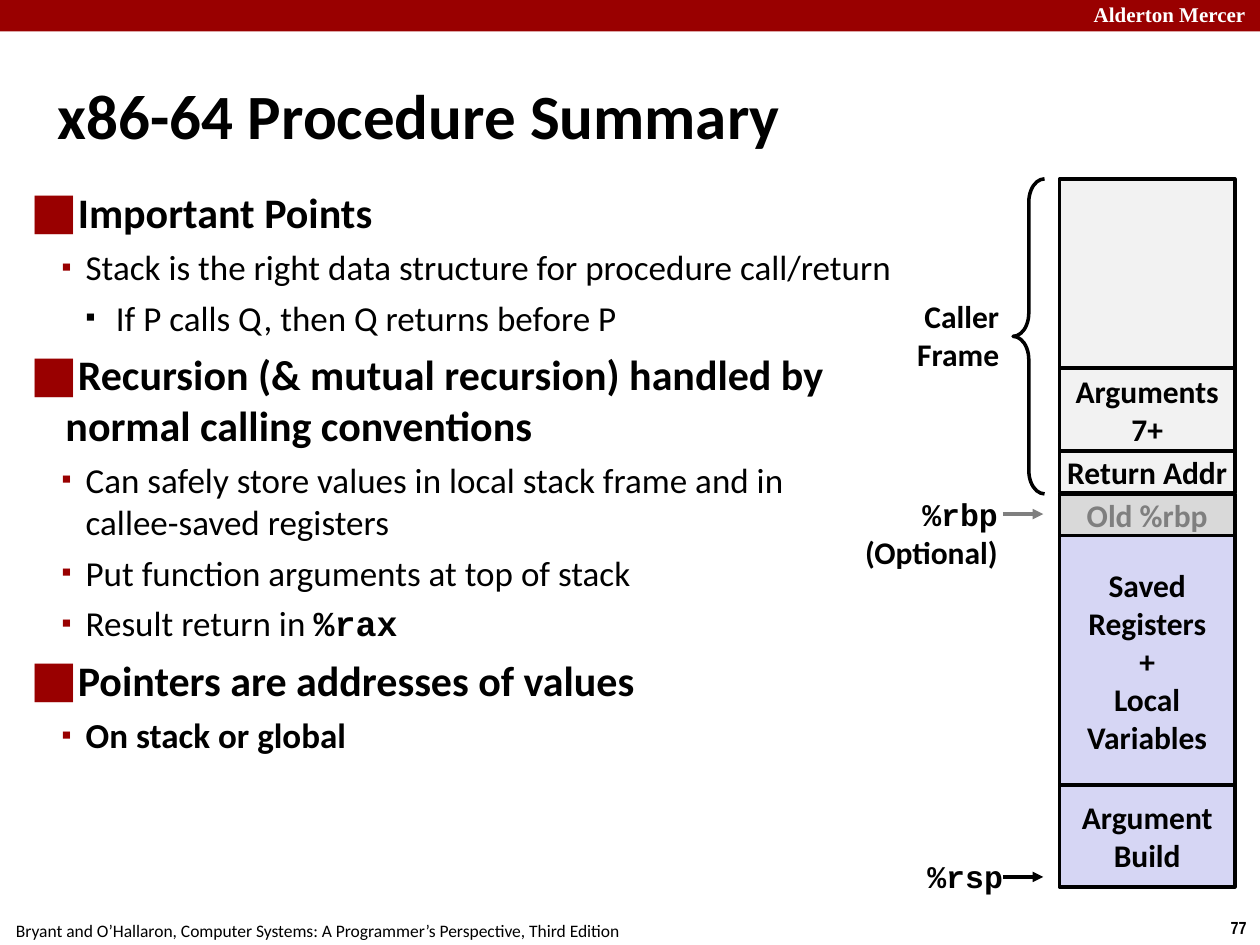
from dataclasses import dataclass

from lxml.etree import SubElement
from pptx import Presentation
from pptx.dml.color import RGBColor
from pptx.enum.shapes import MSO_CONNECTOR, MSO_SHAPE
from pptx.enum.text import MSO_ANCHOR, MSO_AUTO_SIZE, PP_ALIGN
from pptx.oxml.ns import qn
from pptx.util import Inches, Pt

RED, BLACK, WHITE, GRAY = "990000", "000000", "FFFFFF", "7F7F7F"
PALE, LILAC = "F2F2F2", "D6D6F4"
SANS, MONO = "Calibri", "Courier New"
LEFT, MID, RIGHT = PP_ALIGN.LEFT, PP_ALIGN.CENTER, PP_ALIGN.RIGHT


@dataclass
class Run:
    text: str
    size: float = 18
    font: str = SANS
    color: str = BLACK
    bold: bool = True


@dataclass
class Level:
    mark: str
    scale: int
    color: str
    size: float
    left: float
    hang: float
    gap: float


@dataclass
class Cell:
    top: float
    high: float
    fill: str
    lines: tuple = ()
    color: str = BLACK


@dataclass
class Label:
    box: tuple
    lines: tuple
    align: PP_ALIGN = RIGHT
    pad: tuple = (0.04, 0.04)
    wrap: bool = True


LEVELS = (
    Level("■", 120, RED, 24, 0.28, 0.28, 6),
    Level("▪", 80, RED, 20, 0.44, 0.19, 5),
    Level("▪", 80, BLACK, 20, 0.68, 0.24, 5),
)

# Level, then (text, font, bold) for each run
POINTS = (
    (0, ("Important Points", SANS, True)),
    (1, ("Stack is the right data structure for procedure call/return", SANS, False)),
    (2, ("If P calls Q, then Q returns before P", SANS, False)),
    (0, ("Recursion (& mutual recursion) handled by normal calling conventions", SANS, True)),
    (1, ("Can safely store values in local stack frame and in \vcallee-saved registers", SANS, False)),
    (1, ("Put function arguments at top of stack", SANS, False)),
    (1, ("Result return in ", SANS, False), ("%rax", MONO, True)),
    (0, ("Pointers are addresses of values", SANS, True)),
    (1, ("On stack or global", SANS, True)),
)

STACK = (
    Cell(1.42, 1.5, PALE),
    Cell(2.92, 0.67, PALE, ("Arguments", "7+")),
    Cell(3.58, 0.33, PALE, ("Return Addr",)),
    Cell(3.92, 0.33, "D9D9D9", ("Old %rbp",), GRAY),
    Cell(4.25, 1.99, LILAC, ("Saved", "Registers", "+", "Local", "Variables")),
    Cell(6.23, 0.81, LILAC, ("Argument", "Build")),
)

LABELS = (
    Label((8.64, -0.03, 1.44, 0.28), (Run("Alderton Mercer", 12, "Times New Roman", WHITE),), LEFT),
    Label((9.66, 7.23, 0.34, 0.27), (Run("77", 10, "Arial Narrow"),), MID, (0.1, 0.05), False),
    Label((-0.02, 7.25, 5.08, 0.27),
          (Run("Bryant and O’Hallaron, Computer Systems: A Programmer’s Perspective, Third Edition",
               10, bold=False),), MID, (0.1, 0.05), False),
    Label((7.22, 2.32, 0.75, 0.69), (Run("Caller"), Run("Frame"))),
    Label((6.25, 3.89, 1.71, 0.36), (Run("%rbp", font=MONO), Run("(Optional)"))),
    Label((6.38, 6.76, 1.62, 0.36), (Run("%rsp", font=MONO),)),
)

ARROWS = ((4.08, GRAY), (6.96, BLACK))


def rgb(code: str) -> RGBColor:
    return RGBColor.from_string(code)


def area(box: tuple) -> list:
    return [Inches(n) for n in box]


def frame(shape, pad: tuple = (0, 0), anchor=MSO_ANCHOR.TOP, wrap: bool = True):
    body = shape.text_frame
    body.auto_size = MSO_AUTO_SIZE.NONE
    body.word_wrap = wrap
    body.vertical_anchor = anchor
    body.margin_left = body.margin_right = Inches(pad[0])
    body.margin_top = body.margin_bottom = Inches(pad[1])
    return body


def nth(body, i: int):
    return body.add_paragraph() if i else body.paragraphs[0]


def write(para, item: Run) -> None:
    for i, part in enumerate(item.text.split("\v")):
        if i:
            para.add_line_break()
        run = para.add_run()
        run.text = part
        font = run.font
        font.size, font.name, font.bold = Pt(item.size), item.font, item.bold
        font.color.rgb = rgb(item.color)


def fill_lines(body, lines: tuple, align: PP_ALIGN) -> None:
    for i, item in enumerate(lines):
        para = nth(body, i)
        para.alignment = align
        write(para, item)


def block(slide, kind, box: tuple, fill: str = "", line: str = ""):
    shape = slide.shapes.add_shape(kind, *area(box))
    shape.shadow.inherit = False
    if fill:
        shape.fill.solid()
        shape.fill.fore_color.rgb = rgb(fill)
    else:
        shape.fill.background()
    if line:
        shape.line.color.rgb = rgb(line)
        shape.line.width = Pt(2)
    else:
        shape.line.fill.background()
    return shape


def bullet(para, level: Level) -> None:
    props = para._p.get_or_add_pPr()
    props.set("marL", str(Inches(level.left)))
    props.set("indent", str(-Inches(level.hang)))
    SubElement(SubElement(props, qn("a:buClr")), qn("a:srgbClr")).set("val", level.color)
    SubElement(props, qn("a:buSzPct")).set("val", str(level.scale * 1000))
    SubElement(props, qn("a:buFont")).set("typeface", SANS)
    SubElement(props, qn("a:buChar")).set("char", level.mark)


def arrow(slide, y: float, color: str) -> None:
    line = slide.shapes.add_connector(MSO_CONNECTOR.STRAIGHT, *area((7.96, y, 8.28, y)))
    line.line.color.rgb = rgb(color)
    line.line.width = Pt(2)
    SubElement(line.line._get_or_add_ln(), qn("a:tailEnd")).set("type", "triangle")
    SubElement(line._element.spPr, qn("a:effectLst"))


def main() -> None:
    deck = Presentation()
    deck.slide_width, deck.slide_height = Inches(10), Inches(7.5)
    slide = deck.slides.add_slide(deck.slide_layouts[5])

    # Title and top band
    title = slide.shapes.title
    title.left, title.top, title.width, title.height = area((0.42, 0.28, 9.17, 1.25))
    fill_lines(frame(title, (0.04, 0.04), MSO_ANCHOR.MIDDLE),
               (Run("x86-64 Procedure Summary", 36),), LEFT)
    block(slide, MSO_SHAPE.RECTANGLE, (0, 0, 10, 0.25), RED)

    # Bulleted points
    body = frame(slide.shapes.add_textbox(*area((0.2, 1.44, 7.13, 5.72))), (0.04, 0.04))
    for i, (depth, *runs) in enumerate(POINTS):
        para, level = nth(body, i), LEVELS[depth]
        para.level = depth
        para.space_before = Pt(level.gap if i else 0)
        bullet(para, level)
        for text, font, bold in runs:
            write(para, Run(text, level.size, font, bold=bold))

    # Stack frame
    for cell in STACK:
        shape = block(slide, MSO_SHAPE.RECTANGLE, (8.41, cell.top, 1.39, cell.high), cell.fill, BLACK)
        lines = tuple(Run(text, color=cell.color) for text in cell.lines)
        fill_lines(frame(shape, anchor=MSO_ANCHOR.MIDDLE), lines, MID)

    # Brace, pointers and labels
    brace = block(slide, MSO_SHAPE.LEFT_BRACE, (8.04, 1.42, 0.25, 2.5), line=BLACK)
    brace.adjustments[0] = 0.74
    for y, color in ARROWS:
        arrow(slide, y, color)
    for label in LABELS:
        box = slide.shapes.add_textbox(*area(label.box))
        fill_lines(frame(box, label.pad, wrap=label.wrap), label.lines, label.align)

    deck.save("out.pptx")


if __name__ == "__main__":
    main()
